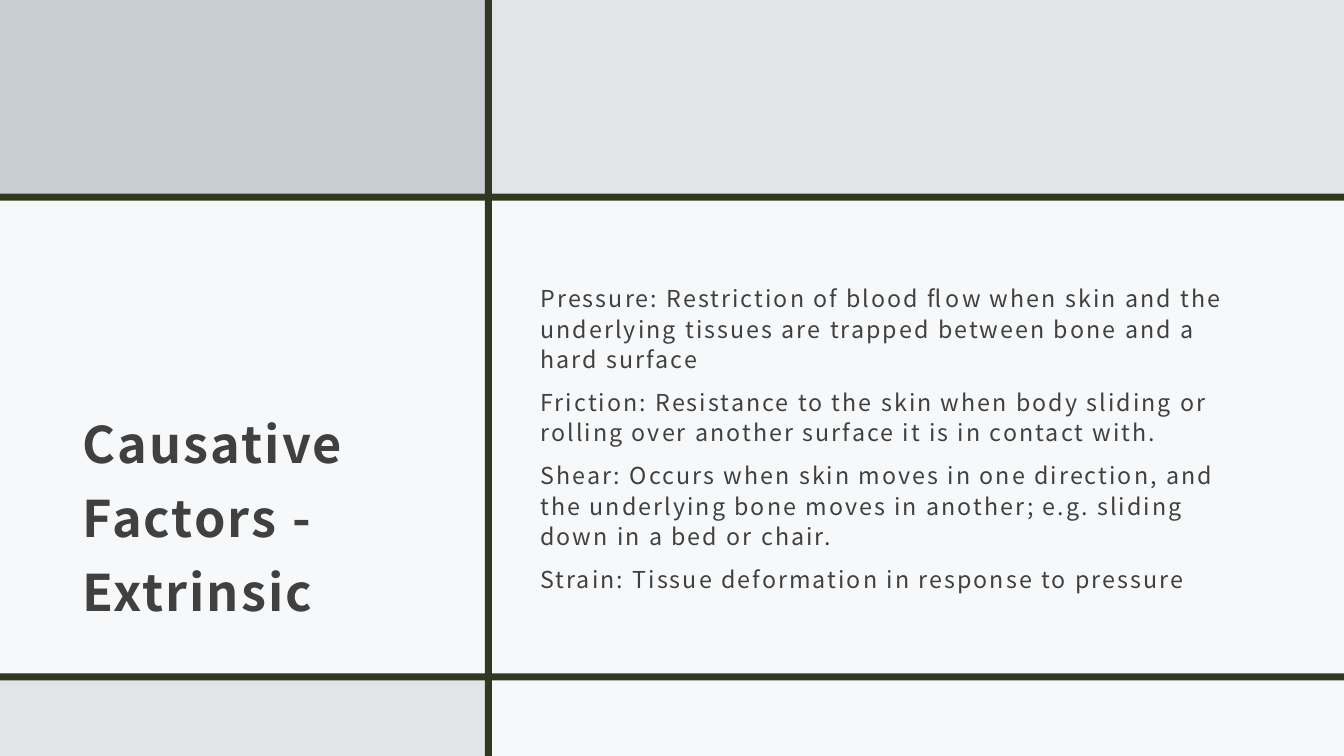
from lxml.etree import SubElement
from pptx import Presentation
from pptx.dml.color import RGBColor
from pptx.enum.shapes import MSO_SHAPE
from pptx.enum.text import MSO_ANCHOR, PP_ALIGN
from pptx.oxml.ns import qn
from pptx.util import Inches, Pt

WIDTH, HEIGHT = 13.33, 7.5
BAR = 0.07
COLUMN, TOP_ROW, BOTTOM_ROW = 4.81, 1.92, 6.68
TEXT_TOP, TEXT_HEIGHT = 2.34, 3.98
FONT, INK, BAR_COLOR = "Noto Sans CJK JP", "404040", "313820"

presentation = Presentation()
presentation.slide_width, presentation.slide_height = Inches(WIDTH), Inches(HEIGHT)
slide = presentation.slides.add_slide(presentation.slide_layouts[6])
slide.background.fill.solid()
slide.background.fill.fore_color.rgb = RGBColor.from_string("E2E5E8")


def add_panel(left, top, width, height, color, opacity=100):
    shape = slide.shapes.add_shape(
        MSO_SHAPE.RECTANGLE, Inches(left), Inches(top), Inches(width), Inches(height))
    shape.shadow.inherit = False
    shape.line.fill.background()
    shape.fill.solid()
    shape.fill.fore_color.rgb = RGBColor.from_string(color)
    if opacity < 100:
        color_node = shape.fill._xPr.find(qn("a:solidFill"))[0]
        SubElement(color_node, qn("a:alpha"), val=str(opacity * 1000))


def add_text(left, width, paragraphs, size, line_spacing, space_before, anchor, bottom, bold=False):
    box = slide.shapes.add_textbox(
        Inches(left), Inches(TEXT_TOP), Inches(width), Inches(TEXT_HEIGHT))
    frame = box.text_frame
    frame.word_wrap = True
    frame.vertical_anchor = anchor
    frame.margin_left = frame.margin_top = frame.margin_right = Inches(0.12)
    frame.margin_bottom = Inches(bottom)
    frame.text = "\n".join(paragraphs)
    for paragraph in frame.paragraphs:
        paragraph.alignment = PP_ALIGN.LEFT
        paragraph.line_spacing = line_spacing
        paragraph.space_before = Pt(space_before)
        paragraph.font.name = FONT
        paragraph.font.size = Pt(size)
        paragraph.font.bold = bold
        paragraph.font.color.rgb = RGBColor.from_string(INK)
        for run in paragraph.runs:
            run.font._element.set("spc", "150")


# Tinted cells of the grid
add_panel(0, TOP_ROW, WIDTH, BOTTOM_ROW - TOP_ROW, "FFFFFF", 75)
add_panel(0, 0, COLUMN, TOP_ROW, "C8CED4")
add_panel(COLUMN, BOTTOM_ROW, WIDTH - COLUMN, HEIGHT - BOTTOM_ROW, "FFFFFF", 75)

# Dark bars between the cells
for row in (TOP_ROW, BOTTOM_ROW):
    add_panel(0, row, WIDTH, BAR, BAR_COLOR)
add_panel(COLUMN, 0, BAR, HEIGHT, BAR_COLOR)

add_text(0.7, 3.73, ["Causative\vFactors - Extrinsic"], 36, 1.23, 0,
         MSO_ANCHOR.BOTTOM, 0.15, bold=True)

factors = [
    "Pressure: Restriction of blood flow when skin and the underlying tissues "
    "are trapped between bone and a hard surface",
    "Friction: Resistance to the skin when body sliding or rolling over another "
    "surface it is in contact with.",
    "Shear: Occurs when skin moves in one direction, and the underlying bone "
    "moves in another; e.g. sliding down in a bed or chair.",
    "Strain: Tissue deformation in response to pressure",
]
add_text(5.24, 7.39, factors, 16.6, 1.09, 8.9, MSO_ANCHOR.MIDDLE, 0.1)

presentation.save("out.pptx")
